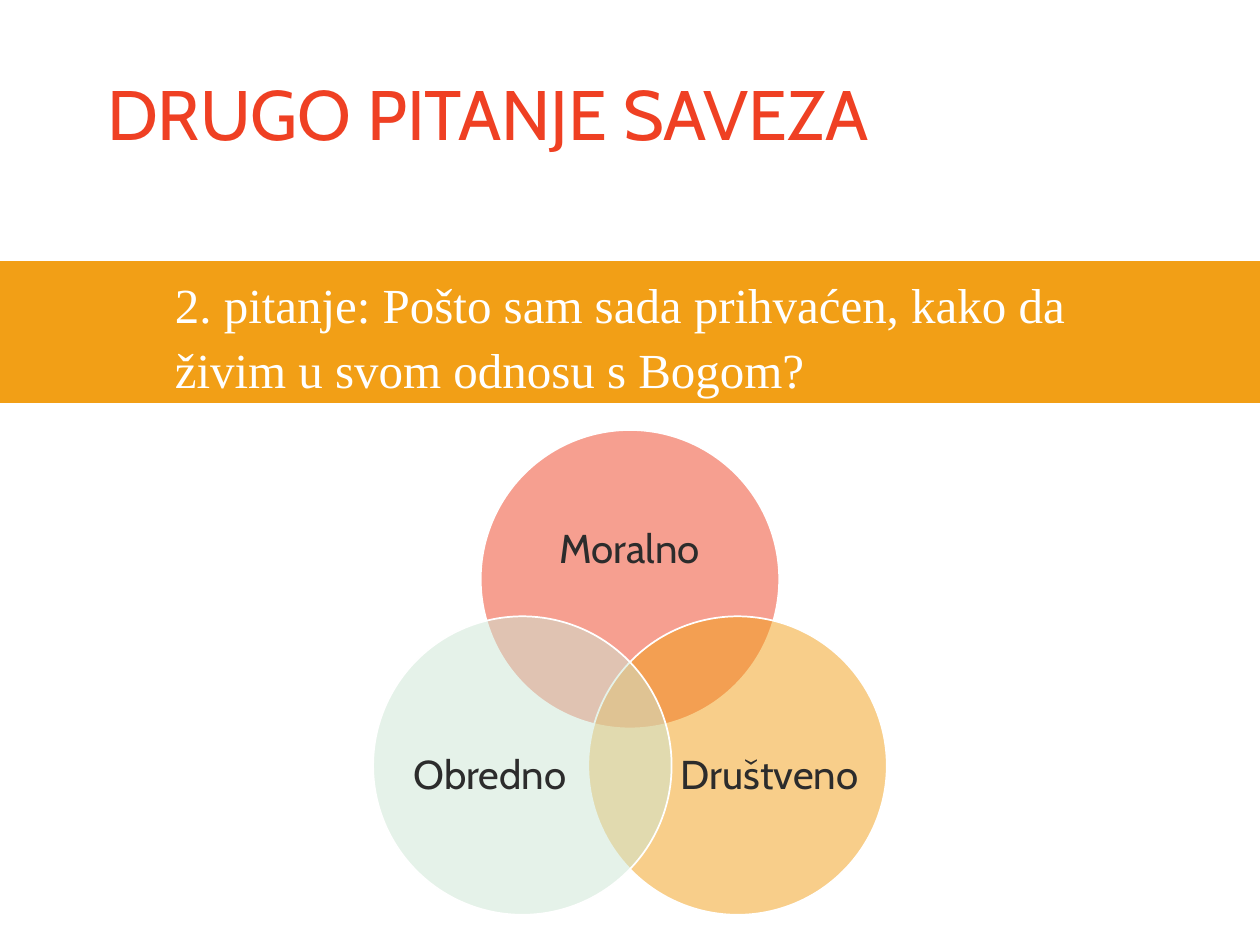
import math
from lxml import etree
from pptx import Presentation
from pptx.dml.color import RGBColor
from pptx.enum.shapes import MSO_SHAPE
from pptx.enum.text import MSO_ANCHOR, MSO_AUTO_SIZE, PP_ALIGN
from pptx.oxml.ns import qn
from pptx.util import Pt

RECT, OVAL = MSO_SHAPE.RECTANGLE, MSO_SHAPE.OVAL
TOP, MIDDLE = MSO_ANCHOR.TOP, MSO_ANCHOR.MIDDLE
LEFT, CENTER = PP_ALIGN.LEFT, PP_ALIGN.CENTER
NO_FIT = MSO_AUTO_SIZE.NONE

THEME = {
    "red": "EF4023", "orange": "F29F16", "mint": "CCE7D4",
    "white": "FFFFFF", "dark": "2C2C2C",
    "sans": "Cabin", "serif": "Times New Roman",
    "title": 40, "question": 28, "label": 23,
}


def write(sp, text, font, size, color, frame, para):
    tf = sp.text_frame
    for name, value in {"word_wrap": True, "auto_size": NO_FIT, **frame}.items():
        setattr(tf, name, value)
    p = tf.paragraphs[0]
    for name, value in para.items():
        setattr(p, name, value)
    r = p.add_run()
    r.text = text
    r.font.name = THEME[font]
    r.font.size = Pt(THEME[size])
    r.font.color.rgb = RGBColor.from_string(THEME[color])


def add_filled(kind, box, fill, line, alpha=None):
    sp = slide.shapes.add_shape(kind, *map(Pt, box))
    sp.shadow.inherit = False
    sp.fill.solid()
    sp.fill.fore_color.rgb = RGBColor.from_string(THEME[fill])
    sp.line.color.rgb = RGBColor.from_string(THEME[line])
    sp.line.width = Pt(1)
    if alpha:
        clr = sp._element.spPr.find(qn("a:solidFill")).find(qn("a:srgbClr"))
        etree.SubElement(clr, qn("a:alpha")).set("val", str(alpha * 1000))


prs = Presentation()
prs.slide_width, prs.slide_height = Pt(720), Pt(540)
slide = prs.slides.add_slide(prs.slide_layouts[5])

add_filled(RECT, (0, 149.8, 720, 79.9), "orange", "orange")

sp = slide.shapes.add_textbox(Pt(92.9), Pt(149.8), Pt(593.3), Pt(79.9))
write(sp, "2. pitanje: Pošto sam sada prihvaćen, kako da živim u svom odnosu s Bogom?",
      "serif", "question", "white", {"vertical_anchor": TOP},
      {"alignment": LEFT, "line_spacing": Pt(37)})

sp = slide.shapes.title
sp.left, sp.top, sp.width, sp.height = Pt(54), Pt(43.9), Pt(632.2), Pt(118.8)
write(sp, "DRUGO PITANJE SAVEZA", "sans", "title", "red",
      {"vertical_anchor": TOP}, {"alignment": LEFT, "line_spacing": 0.85})

center_x, center_y, spread, diameter = 360, 402, 71, 170.6
label_frame = {"vertical_anchor": MIDDLE, "margin_left": 0, "margin_right": 0,
               "margin_top": 0, "margin_bottom": 0}
label_para = {"alignment": CENTER, "line_spacing": 0.9, "space_after": Pt(8)}
circles = [
    ("Moralno", "red", -90, 0, -16.7, 125.3, 77),
    ("Društveno", "orange", 30, 18.4, 6, 102.2, 93.6),
    ("Obredno", "mint", 150, -18.4, 6, 102.2, 93.6),
]
for text, fill, angle, dx, dy, w, h in circles:
    x = center_x + spread * math.cos(math.radians(angle))
    y = center_y + spread * math.sin(math.radians(angle))
    add_filled(OVAL, (x - diameter / 2, y - diameter / 2, diameter, diameter),
               fill, "white", 50)
    sp = slide.shapes.add_textbox(Pt(x + dx - w / 2), Pt(y + dy - h / 2), Pt(w), Pt(h))
    write(sp, text, "sans", "label", "dark", label_frame, label_para)

prs.save("out.pptx")
